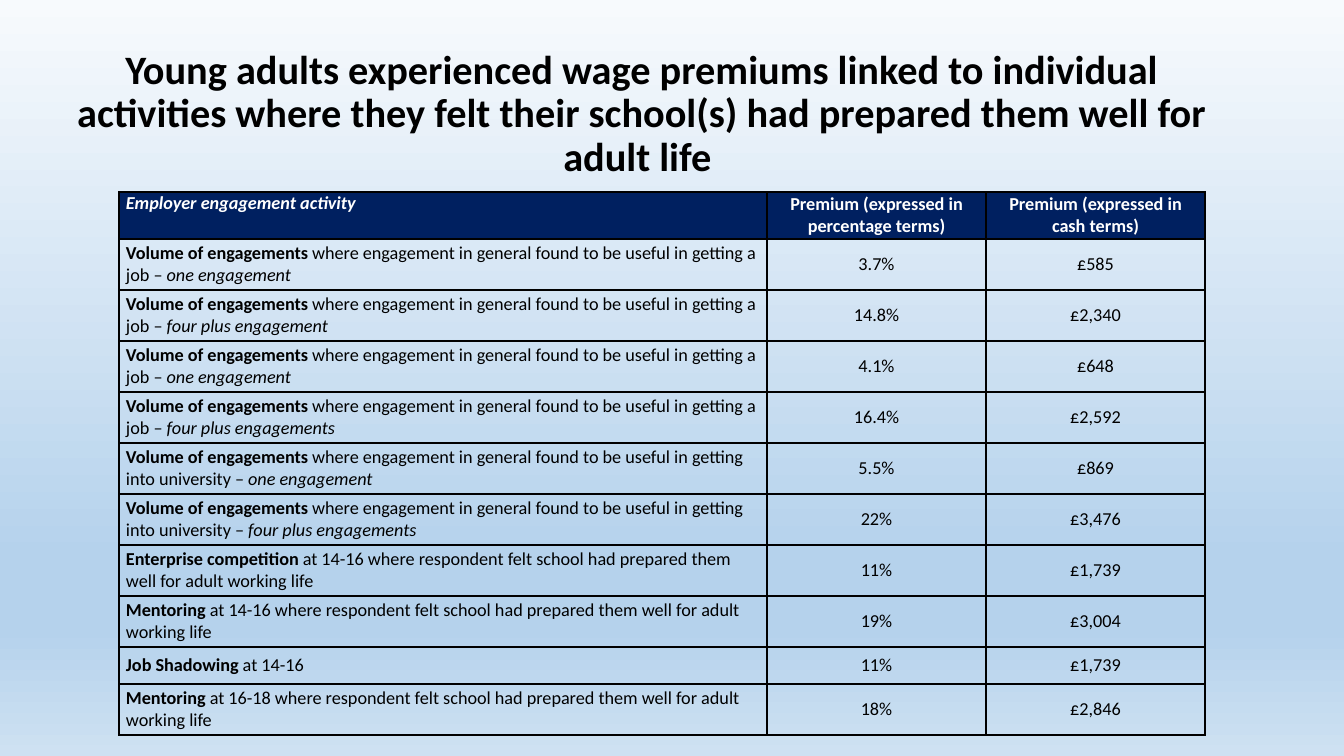
"""Build the slide on wage premiums linked to employer engagement activities."""
from dataclasses import dataclass

import pptx
import pptx.dml.color
import pptx.enum.text
import pptx.oxml
import pptx.oxml.ns
import pptx.util

PX = 914400 / 100.8
FONT = "Calibri"
BLACK, WHITE, NAVY = "000000", "FFFFFF", "002060"
BACKGROUND_STOPS = [(0, "F7FAFD"), (74, "B5D2EC"), (83, "B5D2EC"), (100, "CEE1F2")]
TITLE = ("Young adults experienced wage premiums linked to individual activities "
         "where they felt their school(s) had prepared them well for adult life ")
HEADERS = ["Employer engagement activity", "Premium (expressed in percentage terms)",
           "Premium (expressed in cash terms)"]
COLUMN_WIDTHS = [648, 219, 219]
HEADER_HEIGHT = 47
VOLUME = "Volume of engagements"
JOB = " where engagement in general found to be useful in getting a job – "
UNIVERSITY = " where engagement in general found to be useful in getting into university – "
PREPARED = "where respondent felt school had prepared them well for adult working life"


@dataclass
class Activity:
    """One row of the premium table."""
    name: str
    detail: str
    emphasis: str
    percent: str
    cash: str
    height: int = 51


ACTIVITIES = [
    Activity(VOLUME, JOB, "one engagement", "3.7%", "£585"),
    Activity(VOLUME, JOB, "four plus engagement", "14.8%", "£2,340"),
    Activity(VOLUME, JOB, "one engagement", "4.1%", "£648"),
    Activity(VOLUME, JOB, "four plus engagements", "16.4%", "£2,592"),
    Activity(VOLUME, UNIVERSITY, "one engagement", "5.5%", "£869"),
    Activity(VOLUME, UNIVERSITY, "four plus engagements", "22%", "£3,476"),
    Activity("Enterprise competition", f" at 14-16 {PREPARED}", "", "11%", "£1,739"),
    Activity("Mentoring", f" at 14-16 {PREPARED}", "", "19%", "£3,004"),
    Activity("Job Shadowing", " at 14-16", "", "11%", "£1,739", 37),
    Activity("Mentoring ", f"at 16-18 {PREPARED}", "", "18%", "£2,846"),
]


@dataclass
class Run:
    """A stretch of text with its own weight and slant."""
    text: str
    bold: bool = False
    italic: bool = False


def px(length: int) -> int:
    """Convert pixels to EMU."""
    return round(length * PX)


def rgb(value: str) -> pptx.dml.color.RGBColor:
    """Turn a hex string into a colour."""
    return pptx.dml.color.RGBColor.from_string(value)


def write(p, runs: list[Run], size: float, color: str, centred: bool) -> None:
    """Fill a paragraph with styled runs."""
    align = pptx.enum.text.PP_ALIGN
    p.alignment = align.CENTER if centred else align.LEFT
    p.font.name, p.font.size = FONT, pptx.util.Pt(size)
    p.font.color.rgb = rgb(color)
    for run in runs:
        r = p.add_run()
        r.text = run.text
        r.font.bold, r.font.italic = run.bold, run.italic


def set_background(s) -> None:
    """Give the slide its vertical gradient."""
    fill = s.background.fill
    fill.gradient()
    fill.gradient_angle = 270
    stops = next(s.element.iter(pptx.oxml.ns.qn("a:gsLst")))
    for stop in list(stops):
        stops.remove(stop)
    for position, color in BACKGROUND_STOPS:
        stops.append(pptx.oxml.parse_xml(
            f'<a:gs {pptx.oxml.ns.nsdecls("a")} pos="{position * 1000}">'
            f'<a:srgbClr val="{color}"/></a:gs>'))


def add_title(s) -> None:
    """Place the slide title."""
    sp = s.shapes.add_textbox(px(64), px(53), px(1156), px(123))
    tf = sp.text_frame
    tf.word_wrap = True
    tf.vertical_anchor = pptx.enum.text.MSO_ANCHOR.MIDDLE
    p = tf.paragraphs[0]
    p.line_spacing = 0.9
    write(p, [Run(TITLE, bold=True)], 28.8, BLACK, True)


def style_cell(cell, fill: str = "") -> None:
    """Set the margins, anchor, borders and fill of a cell."""
    cell.margin_left = cell.margin_right = px(7)
    cell.margin_top = cell.margin_bottom = 0
    cell.vertical_anchor = pptx.enum.text.MSO_ANCHOR.MIDDLE
    properties = cell._tc.get_or_add_tcPr()
    for side in "LRTB":
        properties.append(pptx.oxml.parse_xml(
            f'<a:ln{side} {pptx.oxml.ns.nsdecls("a")} w="12700"><a:solidFill>'
            f'<a:srgbClr val="{BLACK}"/></a:solidFill></a:ln{side}>'))
    if fill:
        cell.fill.solid()
        cell.fill.fore_color.rgb = rgb(fill)
    else:
        cell.fill.background()


def add_premium_table(s) -> None:
    """Draw the table of activities and premiums."""
    heights = [HEADER_HEIGHT] + [activity.height for activity in ACTIVITIES]
    table = s.shapes.add_table(len(heights), len(COLUMN_WIDTHS), px(119), px(192),
                               px(sum(COLUMN_WIDTHS)), px(sum(heights))).table
    table.first_row = table.horz_banding = False
    for column, width in zip(table.columns, COLUMN_WIDTHS):
        column.width = px(width)
    for row, height in zip(table.rows, heights):
        row.height = px(height)

    rows = [[[Run(text, True, i == 0)] for i, text in enumerate(HEADERS)]]
    for activity in ACTIVITIES:
        label = [Run(activity.name, bold=True), Run(activity.detail)]
        if activity.emphasis:
            label.append(Run(activity.emphasis, italic=True))
        rows.append([label, [Run(activity.percent)], [Run(activity.cash)]])
    for i, row in enumerate(rows):
        for j, runs in enumerate(row):
            cell = table.cell(i, j)
            style_cell(cell, NAVY if i == 0 else "")
            write(cell.text_frame.paragraphs[0], runs, 13,
                  WHITE if i == 0 else BLACK, j > 0)
    table.cell(0, 0).vertical_anchor = pptx.enum.text.MSO_ANCHOR.TOP


def main() -> None:
    """Build and save the presentation."""
    prs = pptx.Presentation()
    prs.slide_width, prs.slide_height = px(1344), px(756)
    s = prs.slides.add_slide(prs.slide_layouts[6])
    set_background(s)
    add_title(s)
    add_premium_table(s)
    prs.save("out.pptx")


if __name__ == "__main__":
    main()
